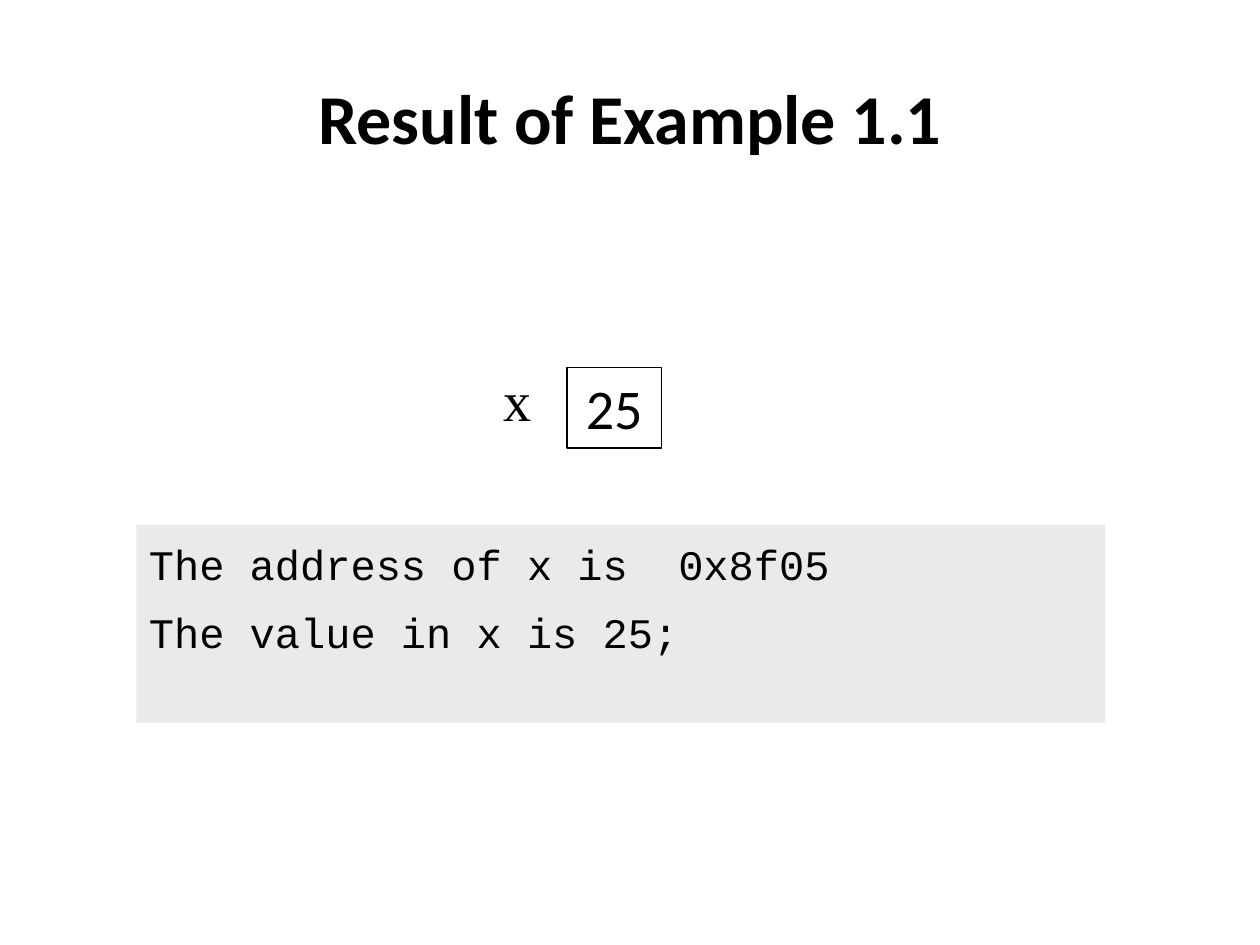
from pptx import Presentation
from pptx.dml.color import RGBColor
from pptx.enum.shapes import MSO_SHAPE
from pptx.enum.text import MSO_ANCHOR as Anchor, PP_ALIGN as Align
from pptx.util import Pt

BLACK = RGBColor(0, 0, 0)
GRAY = RGBColor(0xEA, 0xEA, 0xEA)


def write(frame, lines, face, size, align, bold=False, gap=0):
    """Fill a text frame with evenly spaced lines in one font."""
    frame.text = "\n".join(lines)
    for i, para in enumerate(frame.paragraphs):
        para.alignment = align
        para.space_before = Pt(gap if i else 0)
        font = para.font
        font.name, font.size, font.bold = face, Pt(size), bold
        font.color.rgb = BLACK


def add_title(slide, box, text):
    """Place and format the title."""
    title = slide.shapes.title
    title.left, title.top, title.width, title.height = map(Pt, box)
    title.text_frame.vertical_anchor = Anchor.MIDDLE
    write(title.text_frame, [text], "Calibri", 40, Align.CENTER, bold=True)


def add_rect(slide, box):
    """Add a plain rectangle without a shadow."""
    rect = slide.shapes.add_shape(MSO_SHAPE.RECTANGLE, *map(Pt, box))
    rect.shadow.inherit = False
    rect.text_frame.vertical_anchor = Anchor.TOP
    return rect


def add_output(slide, box, lines):
    """Show program output on a gray panel."""
    panel = add_rect(slide, box)
    panel.fill.solid()
    panel.fill.fore_color.rgb = GRAY
    panel.line.fill.background()
    panel.text_frame.margin_top = Pt(8)
    write(panel.text_frame, lines, "Courier New", 24, Align.LEFT, gap=10)


def add_variable(slide, box, name, value):
    """Draw a variable as a name beside a cell with its value."""
    left, top, width, height = box
    cell_w, cell_h, label_w = 54, 46, 39
    label = slide.shapes.add_textbox(Pt(left), Pt(top), Pt(label_w), Pt(height))
    label.text_frame.word_wrap = False
    label.text_frame.vertical_anchor = Anchor.MIDDLE
    write(label.text_frame, [name], "Times New Roman", 32, Align.CENTER)
    cell = add_rect(slide, (left + width - cell_w, top + 6, cell_w, cell_h))
    cell.fill.background()
    cell.line.color.rgb = BLACK
    cell.line.width = Pt(0.75)
    write(cell.text_frame, [value], "Calibri", 32, Align.CENTER)


def main():
    """Build and save the slide."""
    deck = Presentation()
    deck.slide_width, deck.slide_height = Pt(720), Pt(540)
    slide = deck.slides.add_slide(deck.slide_layouts[5])
    add_title(slide, (36, 21.6, 648, 90), "Result of Example 1.1")
    add_output(slide, (78, 300, 553.5, 113),
               ["The address of x is  0x8f05", "The value in x is 25;"])
    add_variable(slide, (276, 204, 102, 48), "x", "25")
    deck.save("out.pptx")


if __name__ == "__main__":
    main()
